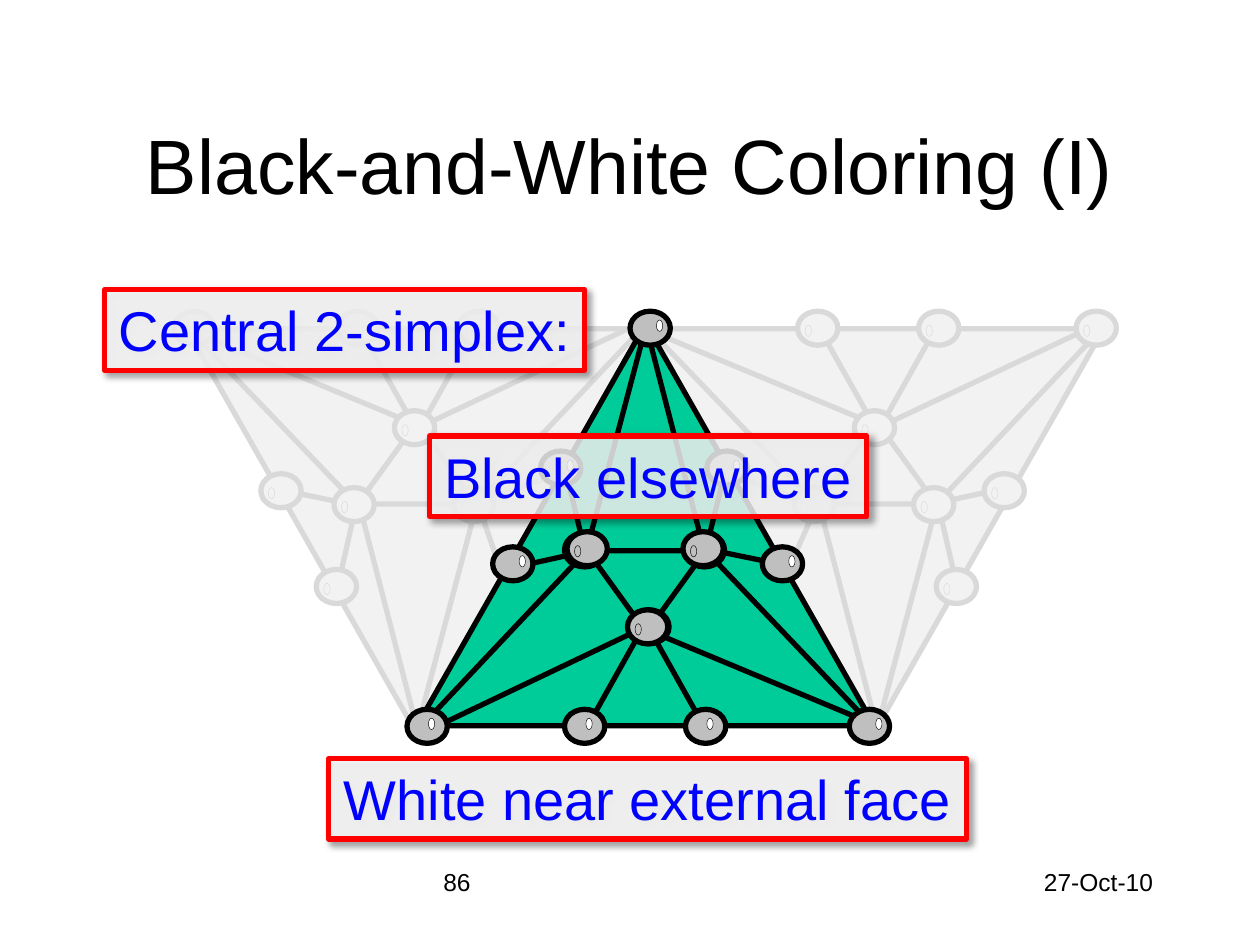
from typing import NamedTuple

from lxml import etree
from pptx import Presentation
from pptx.dml.color import RGBColor
from pptx.enum.shapes import MSO_CONNECTOR, MSO_SHAPE
from pptx.enum.text import MSO_ANCHOR, MSO_AUTO_SIZE, PP_ALIGN
from pptx.oxml.ns import qn
from pptx.util import Cm, Pt

LEFT, CENTER, RIGHT = PP_ALIGN.LEFT, PP_ALIGN.CENTER, PP_ALIGN.RIGHT
TOP, MIDDLE = MSO_ANCHOR.TOP, MSO_ANCHOR.MIDDLE
OVAL, RECT = MSO_SHAPE.OVAL, MSO_SHAPE.RECTANGLE
TRIANGLE = MSO_SHAPE.ISOSCELES_TRIANGLE
STRAIGHT = MSO_CONNECTOR.STRAIGHT
FONT = "Arial"
PALE, PALE_LINE = "F2F2F2", "D9D9D9"
GREEN, GREY, BLACK, WHITE = "00CC99", "BFBFBF", "000000", "FFFFFF"
RED, BLUE = "FF0000", "0000FF"
LINE_W, GLINT_LINE_W = 3, 0.25
NODE_W, NODE_H, GLINT_W, GLINT_H = 0.32, 0.27, 0.05, 0.09
SIDE_SHIFT = 3.65  # from the left simplex to the right one


class Box(NamedTuple):
    x: float
    y: float
    w: float
    h: float


class Edge(NamedTuple):
    x1: float
    y1: float
    x2: float
    y2: float


class Node(NamedTuple):
    x: float
    y: float
    fill: str = PALE
    glint: str = PALE
    dx: float = 0.06
    dy: float = 0.11
    line: str = PALE_LINE


class Label(NamedTuple):
    text: str
    box: Box


def unit(v: float) -> Cm:
    """One layout unit is 2.54 cm."""
    return Cm(v * 2.54)


def color(hex_code: str) -> RGBColor:
    return RGBColor.from_string(hex_code)


def add_shape(shapes, kind, box: Box, fill: str, line: str, width: float = LINE_W):
    sp = shapes.add_shape(kind, *map(unit, box))
    sp.shadow.inherit = False
    sp.fill.solid()
    sp.fill.fore_color.rgb = color(fill)
    sp.line.color.rgb = color(line)
    sp.line.width = Pt(width)
    return sp


def add_edge(shapes, edge: Edge, line: str) -> None:
    cx = shapes.add_connector(STRAIGHT, *map(unit, edge))
    cx.line.color.rgb = color(line)
    cx.line.width = Pt(LINE_W)
    etree.SubElement(cx.element.spPr, qn("a:effectLst"))


def add_node(shapes, n: Node) -> None:
    group = shapes.add_group_shape().shapes
    add_shape(group, OVAL, Box(n.x, n.y, NODE_W, NODE_H), n.fill, n.line)
    glint = Box(n.x + n.dx, n.y + n.dy, GLINT_W, GLINT_H)
    add_shape(group, OVAL, glint, n.glint, n.line, GLINT_LINE_W)


def set_text(sp, text: str, size: int, font_color: str, align, anchor=TOP, wrap=True) -> None:
    tf = sp.text_frame
    tf.word_wrap = wrap
    tf.vertical_anchor = anchor
    p = tf.paragraphs[0]
    p.text = text
    p.alignment = align
    p.font.name = FONT
    p.font.size = Pt(size)
    p.font.color.rgb = color(font_color)


def add_label(shapes, label: Label) -> None:
    sp = add_shape(shapes, RECT, label.box, WHITE, RED)
    set_text(sp, label.text, 32, BLUE, CENTER, wrap=False)
    sp.text_frame.auto_size = MSO_AUTO_SIZE.SHAPE_TO_FIT_TEXT
    # 80 % opaque fill and a soft shadow to the lower right
    sp_pr = sp.element.spPr
    fill = sp_pr.find(qn("a:solidFill")).find(qn("a:srgbClr"))
    etree.SubElement(fill, qn("a:alpha"), val="80000")
    shadow = etree.SubElement(
        sp_pr.find(qn("a:effectLst")), qn("a:outerShdw"), blurRad=str(Pt(4)),
        dist=str(Pt(3)), dir=str(45 * 60000), algn="tl", rotWithShape="0")
    clr = etree.SubElement(shadow, qn("a:srgbClr"), val=BLACK)
    etree.SubElement(clr, qn("a:alpha"), val="40000")


# Side simplexes: edges and nodes shared by both, then those of each side
SIDE_EDGES = [
    Edge(3.78, 4.02, 3.3, 5.83), Edge(3.81, 3.97, 5.14, 2.56),
    Edge(5.11, 2.55, 3.33, 3.39), Edge(3.3, 3.37, 1.47, 2.61),
    Edge(2.82, 3.99, 1.44, 2.55), Edge(3.32, 5.82, 2.84, 3.96),
    Edge(3.32, 3.42, 3.78, 2.6), Edge(3.31, 3.42, 2.85, 2.6),
]
SIDE_NODES = [(3.64, 2.47), (2.68, 2.47), (2.65, 3.87), (3.6, 3.87), (3.13, 3.26)]
LEFT_SPOKES = [
    Edge(2.87, 4.02, 2.19, 3.88), Edge(3.75, 4, 4.44, 3.76),
    Edge(2.82, 4.04, 2.68, 4.66), Edge(3.8, 4.02, 3.98, 4.54),
]
RIGHT_SPOKES = [
    Edge(6.52, 4.02, 5.76, 3.75), Edge(7.4, 4, 8.09, 3.85),
    Edge(6.47, 4.04, 6.23, 4.58), Edge(7.45, 4.02, 7.59, 4.63),
]
SIDES = [
    (0, LEFT_SPOKES, [(1.38, 2.47), (2.51, 4.52), (2.07, 3.76)]),
    (SIDE_SHIFT, RIGHT_SPOKES, [(8.54, 2.47), (7.43, 4.52), (7.81, 3.76)]),
]

# Central simplex
CENTRAL_EDGES = [
    Edge(4.66, 4.35, 5.14, 2.54), Edge(4.63, 4.4, 3.3, 5.81),
    Edge(3.33, 5.83, 5.11, 4.98), Edge(5.14, 5, 6.96, 5.76),
    Edge(5.61, 4.38, 6.99, 5.83), Edge(5.12, 2.56, 5.6, 4.41),
    Edge(5.12, 4.95, 4.66, 5.77), Edge(5.13, 4.95, 5.59, 5.77),
    Edge(5.57, 4.35, 6.25, 4.49), Edge(4.68, 4.37, 4, 4.52),
    Edge(5.61, 4.33, 5.76, 3.72), Edge(4.64, 4.36, 4.49, 3.74),
]
CENTRAL_NODES = [
    Node(x, y, fill, WHITE, dx, 0.07, BLACK) for x, y, fill, dx in [
        (6.74, 5.63, GREY, 0.21), (4.48, 5.63, GREY, 0.17),
        (5.44, 5.63, GREY, 0.17), (3.23, 5.63, GREY, 0.17),
        (5.43, 4.23, BLACK, 0.21), (4.29, 3.58, GREY, 0.21),
        (4.48, 4.23, BLACK, 0.21), (5.61, 3.58, GREY, 0.21),
        (4.99, 4.84, WHITE, 0.21), (6.05, 4.34, GREY, 0.21),
        (3.91, 4.34, GREY, 0.21), (5, 2.47, GREY, 0.21),
    ]
]
INNER_NODES = [
    Node(x, y, GREY, GREY, line=BLACK)
    for x, y in [(4.5, 4.22), (5.42, 4.22), (4.98, 4.84)]
]
LABELS = [
    Label("Central 2-simplex:", Box(0.83, 2.3, 3.81, 0.64)),
    Label("White near external face", Box(2.61, 6.02, 5.06, 0.64)),
    Label("Black elsewhere", Box(3.41, 3.46, 3.47, 0.64)),
]


def main() -> None:
    prs = Presentation()
    prs.slide_width, prs.slide_height = unit(10), unit(7.5)
    s = prs.slides.add_slide(prs.slide_layouts[6]).shapes

    # Title, slide number and date
    for text, box, size, align, anchor in [
        ("86", Box(3.42, 6.83, 3.17, 0.5), 14, LEFT, TOP),
        ("27-Oct-10", Box(7.17, 6.83, 2.08, 0.5), 14, RIGHT, TOP),
        ("Black-and-White Coloring (I)", Box(0.75, 0.67, 8.5, 1.25), 44, CENTER, MIDDLE),
    ]:
        set_text(s.add_textbox(*map(unit, box)), text, size, BLACK, align, anchor)

    # Pale simplexes on both sides
    for shift, _, _ in SIDES:
        outer = Box(1.48 + shift, 2.61, 3.63, 3.19)
        add_shape(s, TRIANGLE, outer, PALE, PALE_LINE).rotation = 180
    for shift, spokes, corners in SIDES:
        add_shape(s, TRIANGLE, Box(2.84 + shift, 3.35, 0.94, 0.65), PALE, PALE_LINE)
        shared = [Edge(e.x1 + shift, e.y1, e.x2 + shift, e.y2) for e in SIDE_EDGES]
        for edge in shared + spokes:
            add_edge(s, edge, PALE_LINE)
        for x, y in [(x + shift, y) for x, y in SIDE_NODES] + corners:
            add_node(s, Node(x, y))

    # Central simplex
    central = s.add_group_shape().shapes
    add_shape(central, TRIANGLE, Box(3.31, 2.57, 3.63, 3.19), GREEN, BLACK)
    add_shape(central, TRIANGLE, Box(4.66, 4.37, 0.94, 0.65), GREEN, BLACK).rotation = 180
    for edge in CENTRAL_EDGES:
        add_edge(central, edge, BLACK)
    for node in CENTRAL_NODES:
        add_node(central, node)

    # Captions, then the inner nodes on top
    for label in LABELS:
        add_label(s, label)
    for node in INNER_NODES:
        add_node(s, node)

    prs.save("out.pptx")


if __name__ == "__main__":
    main()
